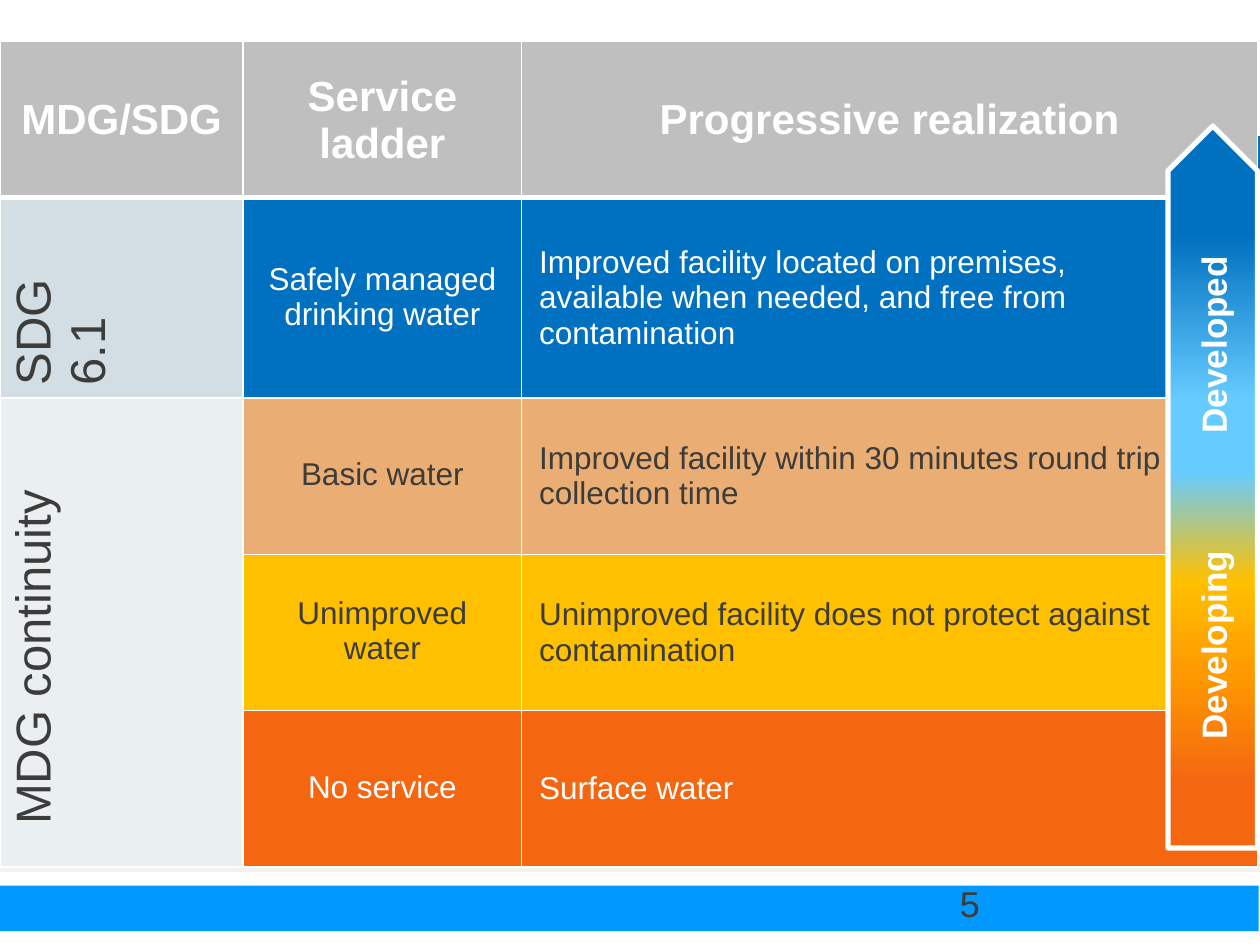
from dataclasses import dataclass
from lxml.etree import SubElement as Sub
from pptx import Presentation
from pptx.dml.color import RGBColor as RGB
from pptx.enum.shapes import MSO_SHAPE as Kind
from pptx.enum.text import MSO_ANCHOR as Anchor, PP_ALIGN as Align
from pptx.oxml.ns import qn
from pptx.util import Inches, Pt


@dataclass(frozen=True)
class Theme:
    font: str = "Arial"
    white: str = "FFFFFF"
    ink: str = "3C3C3B"
    pale: str = "F2F2F2"
    bar: str = "0199FE"
    head: str = "BFBFBF"
    blue: str = "0070C0"
    sky: str = "66CCFF"
    tan: str = "EAAD74"
    gold: str = "FFC000"
    amber: str = "FF9900"
    red: str = "F46710"
    goal: str = "D2DEE3"
    past: str = "EAEFF2"
    big: float = 28
    title: float = 24
    label: float = 20
    body: float = 18
    page: float = 20.5


T = Theme()
COLS = [1.93, 2.21, 5.84]
ROWS = [1.24, 1.58, 1.24, 1.24, 1.24]
HEADS = ["MDG/SDG", "Service ladder", "Progressive realization"]
# Rung name, meaning, fill, text colour
RUNGS = [
    ("Safely managed drinking water",
     "Improved facility located on premises, available when needed, "
     "and free from contamination", T.blue, T.white),
    ("Basic water",
     "Improved facility within 30 minutes round trip collection time",
     T.tan, T.ink),
    ("Unimproved water",
     "Unimproved facility does not protect against contamination",
     T.gold, T.ink),
    ("No service", "Surface water", T.red, T.white),
]
STOPS = [(9, T.red), (24, T.amber), (37, T.gold),
         (52, T.sky), (62, T.sky), (85, T.blue)]


def box(at):
    return [Inches(v) for v in at]


def pad(item, sides):
    (item.margin_left, item.margin_top,
     item.margin_right, item.margin_bottom) = box(sides)


def write(para, text, size, color, bold=False, align=Align.LEFT):
    para.alignment = align
    run = para.add_run()
    run.text = text
    font = run.font
    font.name, font.size, font.bold = T.font, Pt(size), bold
    font.color.rgb = RGB.from_string(color)


def shape(slide, kind, at, fill=None):
    item = slide.shapes.add_shape(kind, *box(at))
    item.shadow.inherit = False
    if fill:
        item.fill.solid()
        item.fill.fore_color.rgb = RGB.from_string(fill)
        item.line.fill.background()
    return item


def solid(parent, color):
    fill = Sub(parent, qn("a:solidFill"))
    Sub(fill, qn("a:srgbClr"), val=color)


def edge(cell, foot=1):
    """White borders, which come before the fill."""
    props = cell._tc.get_or_add_tcPr()
    for i, side in enumerate("LRTB"):
        width = foot if side == "B" else 1
        line = Sub(props, qn("a:ln" + side), w=str(Pt(width)))
        solid(line, T.white)
        props.insert(i, line)


def paint(cell, fill, foot=1):
    cell.fill.solid()
    cell.fill.fore_color.rgb = RGB.from_string(fill)
    edge(cell, foot)


def put(cell, text, size, color, sides, bold=False, align=Align.CENTER):
    cell.vertical_anchor = Anchor.MIDDLE
    pad(cell, sides)
    write(cell.text_frame.paragraphs[0], text, size, color, bold, align)


def turn(cell, text, sides, align):
    put(cell, text, T.big, T.ink, sides, align=align)
    cell._tc.get_or_add_tcPr().set("vert", "vert270")


def ladder(slide):
    grid = slide.shapes.add_table(
        len(ROWS), len(COLS), *box((0, 0.33, sum(COLS), sum(ROWS)))).table
    grid.first_row = grid.horz_banding = False
    for col, width in zip(grid.columns, COLS):
        col.width = Inches(width)
    for row, height in zip(grid.rows, ROWS):
        row.height = Inches(height)
    # Header row
    for c, text in enumerate(HEADS):
        cell = grid.cell(0, c)
        paint(cell, T.head, 3)
        put(cell, text, T.title, T.white, (0.01, 0.01, 0.01, 0), True)
    # Rungs of the ladder
    for r, (name, note, fill, ink) in enumerate(RUNGS, 1):
        paint(grid.cell(r, 0), T.goal if r == 1 else T.past)
        for c in (1, 2):
            paint(grid.cell(r, c), fill)
        put(grid.cell(r, 1), name, T.body, ink, (0.16, 0, 0.16, 0.02))
        put(grid.cell(r, 2), note, T.body, ink,
            (0.14, 0.02, 0.59, 0.02), align=Align.LEFT)
    # Goal periods, read upwards
    grid.cell(2, 0).merge(grid.cell(4, 0))
    turn(grid.cell(1, 0), "SDG 6.1", (0.1, 0.05, 0.1, 0.05), Align.LEFT)
    turn(grid.cell(2, 0), "MDG continuity", (0.1, 0.05, 0.5, 0.05),
         Align.CENTER)


def blend(item, stops):
    item.fill.gradient()
    item.fill.gradient_angle = 0
    bag = item._element.spPr.find(qn("a:gradFill")).find(qn("a:gsLst"))
    for old in list(bag):
        bag.remove(old)
    for pos, color in stops:
        stop = Sub(bag, qn("a:gs"), pos=str(pos * 1000))
        Sub(stop, qn("a:srgbClr"), val=color)


def arrow(slide):
    item = shape(slide, Kind.PENTAGON, (6.76, 3.51, 5.73, 0.71))
    item.rotation = 270
    blend(item, STOPS)
    item.line.color.rgb = RGB.from_string(T.white)
    item.line.width = Pt(3)
    frame = item.text_frame
    frame.word_wrap = True
    frame.vertical_anchor = Anchor.MIDDLE
    pad(frame, (0.39, 0, 0, 0))
    para = frame.paragraphs[0]
    tabs = Sub(para._p.get_or_add_pPr(), qn("a:tabLst"))
    for pos in (0.47, 2.9):
        Sub(tabs, qn("a:tab"), pos=str(Inches(pos)), algn="l")
    write(para, "\tDeveloping\tDeveloped", T.label, T.white, True)


def number(slide):
    frame = slide.shapes.add_textbox(*box((7.52, 6.95, 2.33, 0.4))).text_frame
    frame.word_wrap = True
    write(frame.paragraphs[0], "5", T.page, T.ink)


def main():
    deck = Presentation()
    deck.slide_width, deck.slide_height = Inches(10), Inches(7.5)
    slide = deck.slides.add_slide(deck.slide_layouts[6])
    # Backdrop bands
    for at, fill in (((0, 1.28, 10, 5.64), T.pale),
                     ((-0.01, 7.03, 10, 0.36), T.bar),
                     ((1.9, 1.08, 8.1, 0.35), T.blue)):
        shape(slide, Kind.RECTANGLE, at, fill)
    ladder(slide)
    number(slide)
    arrow(slide)
    deck.save("out.pptx")


if __name__ == "__main__":
    main()
